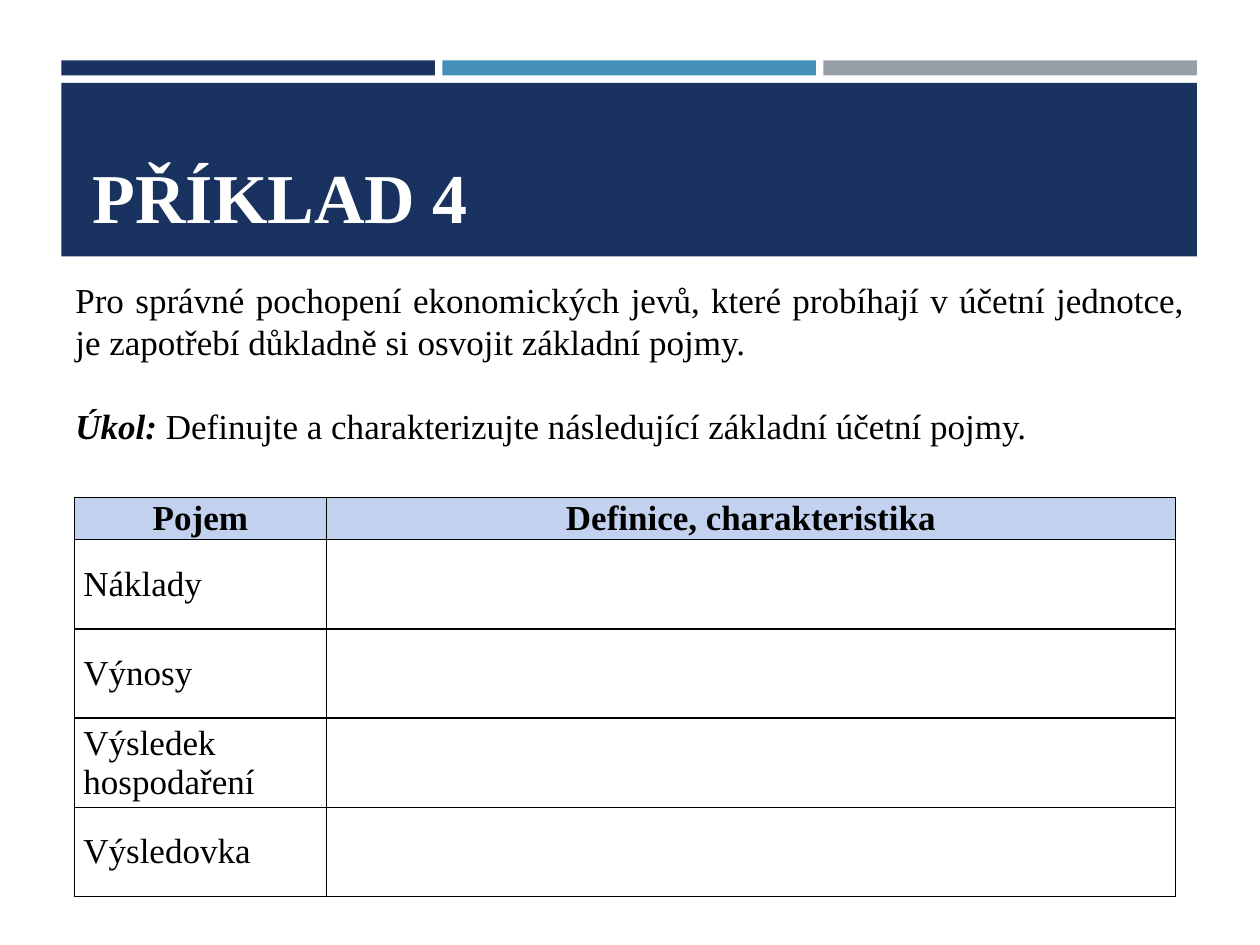
from lxml import etree
from pptx import Presentation
from pptx.dml import color as c
from pptx.enum import shapes, text
from pptx.oxml import ns
from pptx.util import Cm, Pt

COLORS = {
    "navy": "1A3260",
    "blue": "4590B8",
    "gray": "969FA7",
    "header": "C2D1EE",
    "black": "000000",
    "white": "FFFFFF",
}
FONT = "Times New Roman"
TERMS = ["Náklady", "Výnosy", "Výsledek hospodaření", "Výsledovka"]


def rgb(name):
    return c.RGBColor.from_string(COLORS[name])


def add_text(paragraph, content, size=20, color="black", bold=False, italic=False):
    run = paragraph.add_run()
    run.text = content
    run.font.name = FONT
    run.font.size = Pt(size)
    run.font.bold = bold
    run.font.italic = italic
    run.font.color.rgb = rgb(color)


def add_box(slide, left, top, width, height, color):
    shape = slide.shapes.add_shape(
        shapes.MSO_SHAPE.RECTANGLE, Cm(left), Cm(top), Cm(width), Cm(height))
    shape.shadow.inherit = False
    shape.fill.solid()
    shape.fill.fore_color.rgb = rgb(color)
    shape.line.fill.background()


def add_frame(slide, left, top, width, height):
    frame = slide.shapes.add_textbox(Cm(left), Cm(top), Cm(width), Cm(height)).text_frame
    frame.word_wrap = True
    return frame


def add_banner(slide, left, top, width, height):
    gap, bar_height = 0.15, 0.3
    bar_width = (width - 2 * gap) / 3
    for index, color in enumerate(["navy", "blue", "gray"]):
        add_box(slide, left + index * (bar_width + gap), top, bar_width, bar_height, color)
    band_top = top + bar_height + gap
    band_height = height - bar_height - gap
    add_box(slide, left, band_top, width, band_height, "navy")
    frame = add_frame(slide, left + 0.38, band_top + 0.24, width - 0.7, band_height - 0.5)
    frame.vertical_anchor = text.MSO_ANCHOR.BOTTOM
    add_text(frame.paragraphs[0], "PŘÍKLAD 4", size=40, color="white", bold=True)


def add_assignment(slide, left, top, width, height):
    frame = add_frame(slide, left, top, width, height)
    intro, task = frame.paragraphs[0], frame.add_paragraph()
    for paragraph in (intro, task):
        paragraph.alignment = text.PP_ALIGN.JUSTIFY
        paragraph.line_spacing = Pt(24)
    task.space_before = Pt(24)
    add_text(intro, "Pro správné pochopení ekonomických jevů, které probíhají v účetní "
                    "jednotce, je zapotřebí důkladně si osvojit základní pojmy.")
    add_text(task, "Úkol:", bold=True, italic=True)
    add_text(task, " Definujte a charakterizujte následující základní účetní pojmy.")


def set_borders(cell):
    properties = cell._tc.get_or_add_tcPr()
    for position, side in enumerate(["lnL", "lnR", "lnT", "lnB"]):
        line = etree.Element(ns.qn(f"a:{side}"), w=str(Pt(1)))
        fill = etree.SubElement(line, ns.qn("a:solidFill"))
        etree.SubElement(fill, ns.qn("a:srgbClr"), val=COLORS["black"])
        properties.insert(position, line)


def fill_cell(cell, content, header):
    cell.vertical_anchor = text.MSO_ANCHOR.MIDDLE
    cell.margin_left = cell.margin_right = Cm(0.18)
    cell.margin_top = cell.margin_bottom = 0
    if header:
        cell.fill.solid()
        cell.fill.fore_color.rgb = rgb("header")
    else:
        cell.fill.background()
    set_borders(cell)
    if content:
        paragraph = cell.text_frame.paragraphs[0]
        paragraph.alignment = text.PP_ALIGN.CENTER if header else text.PP_ALIGN.LEFT
        paragraph.space_before = paragraph.space_after = Pt(6)
        add_text(paragraph, content, bold=header)


def add_terms(slide, left, top, width, height):
    rows = [("Pojem", "Definice, charakteristika")] + [(term, "") for term in TERMS]
    table = slide.shapes.add_table(
        len(rows), 2, Cm(left), Cm(top), Cm(width), Cm(height)).table
    term_width, header_height = 5.08, 0.84
    table.columns[0].width = Cm(term_width)
    table.columns[1].width = Cm(width - term_width)
    for index, contents in enumerate(rows):
        header = index == 0
        row_height = header_height if header else (height - header_height) / len(TERMS)
        table.rows[index].height = Cm(row_height)
        for column, content in enumerate(contents):
            fill_cell(table.cell(index, column), content, header)


def main():
    presentation = Presentation()
    presentation.slide_width, presentation.slide_height = Cm(25.4), Cm(19.05)
    slide = presentation.slides.add_slide(presentation.slide_layouts[6])
    add_banner(slide, 1.24, 1.22, 22.89, 3.95)
    add_assignment(slide, 1.27, 5.49, 22.86, 3.68)
    add_terms(slide, 1.5, 10.03, 22.2, 8.04)
    presentation.save("out.pptx")


if __name__ == "__main__":
    main()
